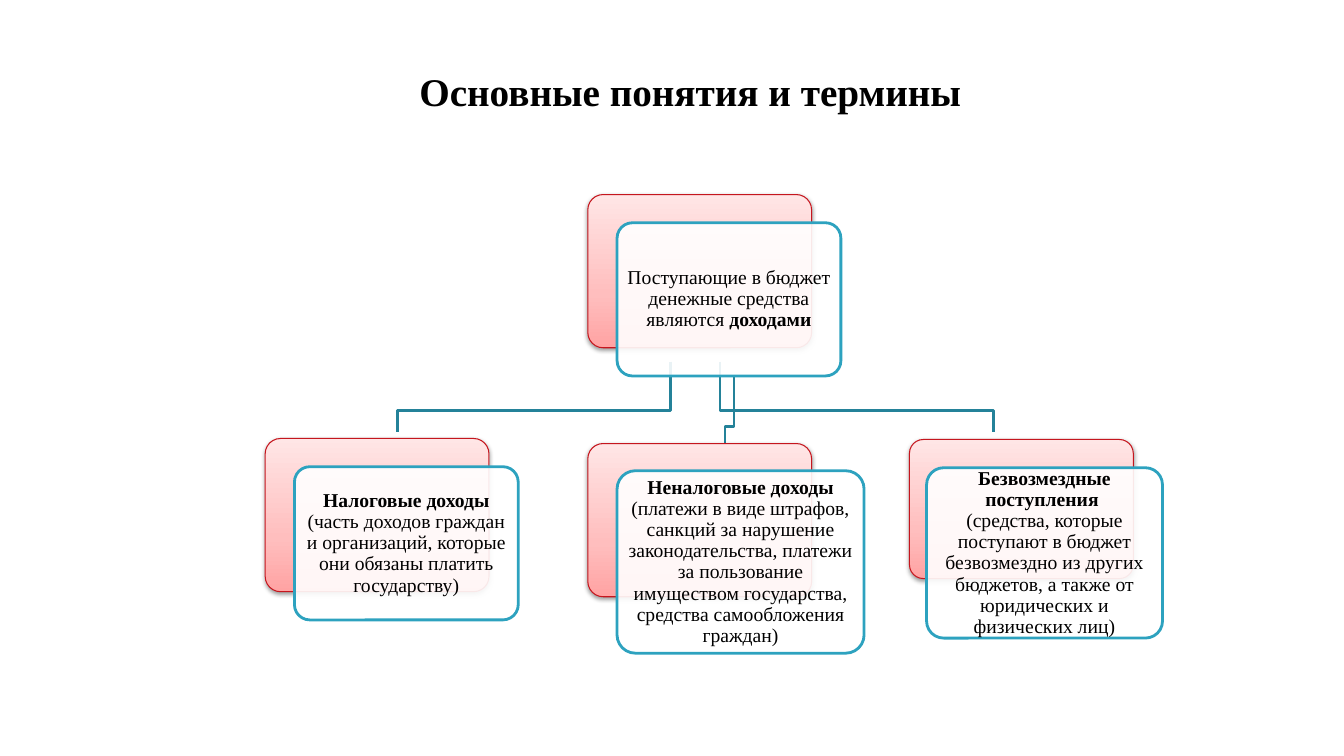
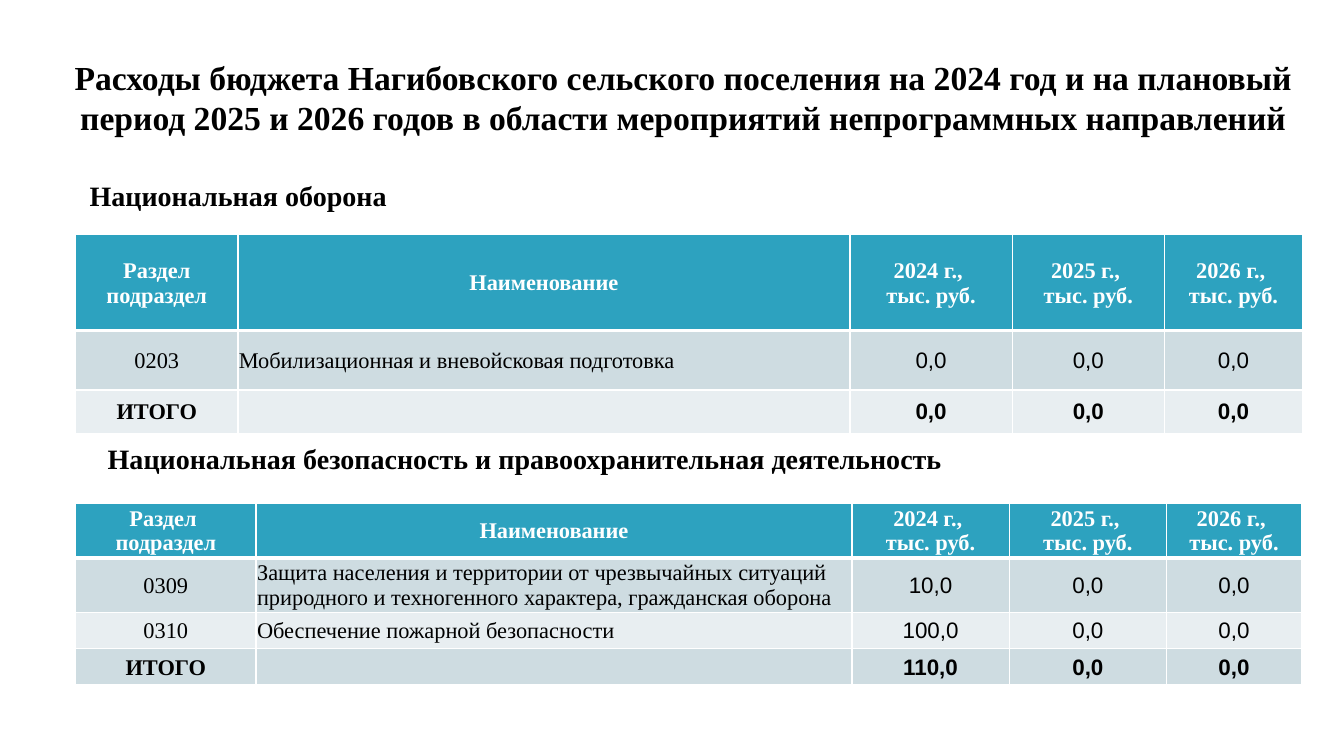
from copy import deepcopy
from dataclasses import dataclass

from lxml.etree import SubElement
from pptx import Presentation
from pptx.dml.color import RGBColor
from pptx.enum.shapes import MSO_SHAPE
from pptx.enum.text import MSO_ANCHOR, PP_ALIGN
from pptx.oxml.ns import qn
from pptx.util import Inches, Pt


@dataclass(frozen=True)
class Theme:
    serif: str = "Times New Roman"
    sans: str = "Arial"
    black: RGBColor = RGBColor(0, 0, 0)
    white: RGBColor = RGBColor(255, 255, 255)
    teal: RGBColor = RGBColor.from_string("2DA2BF")
    dark_teal: RGBColor = RGBColor.from_string("248299")
    red: RGBColor = RGBColor.from_string("C5161E")
    pinks: tuple = ((0, "FFA3A3"), (0.35, "FFBEBE"), (1, "FFE6E6"))
    bands: tuple = (RGBColor.from_string("CEDCE1"), RGBColor.from_string("E8EEF1"))
    title: Pt = Pt(28)
    long_title: Pt = Pt(24)
    heading: Pt = Pt(20)
    table: Pt = Pt(16)
    card: Pt = Pt(14)


theme = Theme()


def style_paragraph(paragraph, size, bold=None, align=PP_ALIGN.CENTER, color=theme.black, name=theme.serif):
    paragraph.alignment = align
    font = paragraph.font
    font.name, font.size, font.bold = name, size, bold
    font.color.rgb = color


def add_heading(slide, box, text, size, align=PP_ALIGN.CENTER):
    frame = slide.shapes.add_textbox(*map(Inches, box)).text_frame
    frame.word_wrap = True
    frame.vertical_anchor = MSO_ANCHOR.MIDDLE
    frame.text = text
    style_paragraph(frame.paragraphs[0], size, True, align)


presentation = Presentation()
presentation.slide_width, presentation.slide_height = Inches(13.33), Inches(7.5)
blank = presentation.slide_layouts[6]

# Slide 1: income diagram
slide = presentation.slides.add_slide(blank)
add_heading(slide, (2.37, 0.55, 8.95, 0.7), "Основные понятия и термины", theme.title)

# Branches: start x, start y, elbow y, end x, end y
branches = [
    (7.14, 3.59, 4.07, 9.85, 4.29),
    (7.28, 3.72, 4.23, 7.19, 4.45),
    (6.65, 3.59, 4.07, 3.94, 4.29),
]
for start_x, start_y, elbow_y, end_x, end_y in branches:
    builder = slide.shapes.build_freeform(Inches(start_x), Inches(start_y))
    corners = [(start_x, elbow_y), (end_x, elbow_y), (end_x, end_y)]
    builder.add_line_segments([(Inches(x), Inches(y)) for x, y in corners], close=False)
    branch = builder.convert_to_shape()
    branch.shadow.inherit = False
    branch.fill.background()
    branch.line.color.rgb = theme.dark_teal
    branch.line.width = Pt(2)

# Cards: back box, front box, paragraphs of (text, bold) runs
cards = [
    ((5.83, 1.93, 2.22, 1.52), (6.12, 2.21, 2.22, 1.52),
     [[("Поступающие в бюджет денежные средства являются ", False), ("доходами", True)]]),
    ((2.63, 4.35, 2.22, 1.52), (2.92, 4.63, 2.22, 1.52),
     [[("Налоговые доходы ", True),
       ("(часть доходов граждан и организаций, которые они обязаны платить государству)", False)]]),
    ((5.83, 4.4, 2.22, 1.52), (6.12, 4.67, 2.45, 1.81),
     [[("Неналоговые доходы ", True),
       ("(платежи в виде штрафов, санкций за нарушение законодательства, платежи за пользование "
        "имуществом государства, средства самообложения граждан)", False)]]),
    ((9.02, 4.36, 2.22, 1.38), (9.19, 4.64, 2.34, 1.69),
     [[("Безвозмездные поступления ", True)],
      [("(средства, которые поступают в бюджет безвозмездно из других бюджетов, а также от "
        "юридических и физических лиц)", False)]]),
]
for back_box, front_box, paragraphs in cards:
    back, front = [
        slide.shapes.add_shape(MSO_SHAPE.ROUNDED_RECTANGLE, *map(Inches, box))
        for box in (back_box, front_box)
    ]
    for shape, color, width in ((back, theme.red, 0.75), (front, theme.teal, 2)):
        shape.adjustments[0] = 0.1
        shape.shadow.inherit = False
        shape.line.color.rgb = color
        shape.line.width = Pt(width)

    # Pink gradient with a soft shadow
    back.fill.gradient()
    back.fill.gradient_angle = 90
    properties = back.element.spPr
    stops = properties.find(".//" + qn("a:gsLst"))
    stops.append(deepcopy(stops[0]))
    for stop, (position, color) in zip(back.fill.gradient_stops, theme.pinks):
        stop.position = position
        stop.color.rgb = RGBColor.from_string(color)
    shadow = SubElement(properties.find(qn("a:effectLst")), qn("a:outerShdw"),
                        blurRad="40000", dist="20000", dir="5400000", rotWithShape="0")
    shadow_color = SubElement(shadow, qn("a:srgbClr"), val=str(theme.black))
    SubElement(shadow_color, qn("a:alpha"), val="38000")

    # Slightly transparent white front with text
    front.fill.solid()
    front.fill.fore_color.rgb = theme.white
    fill_color = front.element.spPr.find(qn("a:solidFill")).find(qn("a:srgbClr"))
    SubElement(fill_color, qn("a:alpha"), val="90000")
    frame = front.text_frame
    frame.word_wrap = True
    frame.vertical_anchor = MSO_ANCHOR.MIDDLE
    frame.margin_left = frame.margin_right = frame.margin_top = frame.margin_bottom = Inches(0.05)
    for index, runs in enumerate(paragraphs):
        paragraph = frame.add_paragraph() if index else frame.paragraphs[0]
        style_paragraph(paragraph, theme.card)
        paragraph.line_spacing = 0.9
        for text, bold in runs:
            run = paragraph.add_run()
            run.text = text
            run.font.bold = bold

# Slide 2: expense tables
slide = presentation.slides.add_slide(blank)
add_heading(slide, (0.44, 0.5, 12.67, 0.92),
            "Расходы бюджета Нагибовского сельского поселения на 2024 год и на плановый период "
            "2025 и 2026 годов в области мероприятий непрограммных направлений", theme.long_title)
add_heading(slide, (0.79, 1.72, 8.48, 0.43), "Национальная оборона", theme.heading, PP_ALIGN.LEFT)
add_heading(slide, (0.97, 4.33, 8.7, 0.43),
            "Национальная безопасность и правоохранительная деятельность", theme.heading, PP_ALIGN.LEFT)

# Tables: top, column widths, row heights, rows
year_headers = [f"{year} г., \nтыс. руб." for year in (2024, 2025, 2026)]
tables = [
    (2.33, (1.61, 6.07, 1.61, 1.51, 1.37), (0.95, 0.59, 0.43),
     [["Раздел подраздел", "Наименование", *year_headers],
      ["0203", "Мобилизационная и вневойсковая подготовка", "0,0", "0,0", "0,0"],
      ["ИТОГО", "", "0,0", "0,0", "0,0"]]),
    (4.99, (1.79, 5.91, 1.56, 1.56, 1.34), (0.54, 0.54, 0.36, 0.36),
     [["Раздел \nподраздел", "Наименование", *year_headers],
      ["0309", "Защита населения и территории от чрезвычайных ситуаций природного и "
       "техногенного характера, гражданская оборона", "10,0", "0,0", "0,0"],
      ["0310", "Обеспечение пожарной безопасности", "100,0", "0,0", "0,0"],
      ["ИТОГО", "", "110,0", "0,0", "0,0"]]),
]
for top, widths, heights, rows in tables:
    table = slide.shapes.add_table(
        len(rows), len(widths), Inches(0.75), Inches(top), Inches(sum(widths)), Inches(sum(heights))
    ).table
    table.horz_banding = False
    for column, width in zip(table.columns, widths):
        column.width = Inches(width)
    for row, height in zip(table.rows, heights):
        row.height = Inches(height)

    for row_index, texts in enumerate(rows):
        is_header = row_index == 0
        is_bold = is_header or texts[0] == "ИТОГО"
        for column_index, text in enumerate(texts):
            cell = table.cell(row_index, column_index)
            cell.margin_left = cell.margin_right = cell.margin_top = Inches(0.01)
            cell.margin_bottom = 0
            cell.vertical_anchor = MSO_ANCHOR.MIDDLE

            # White rules, thicker below the header
            thick_side = {0: "B", 1: "T"}.get(row_index)
            for side in "LRTB":
                width = Pt(3 if side == thick_side else 1)
                border = SubElement(cell._tc.get_or_add_tcPr(), qn(f"a:ln{side}"), w=str(width))
                border_fill = SubElement(border, qn("a:solidFill"))
                SubElement(border_fill, qn("a:srgbClr"), val=str(theme.white))
            cell.fill.solid()
            cell.fill.fore_color.rgb = theme.teal if is_header else theme.bands[(row_index - 1) % 2]

            cell.text = text
            is_name = column_index == 1 and not is_header
            is_number = column_index > 1 and not is_header
            for paragraph in cell.text_frame.paragraphs:
                style_paragraph(
                    paragraph, theme.table, is_bold,
                    PP_ALIGN.LEFT if is_name else PP_ALIGN.CENTER,
                    theme.white if is_header else theme.black,
                    theme.sans if is_number else theme.serif,
                )

presentation.save("out.pptx")
